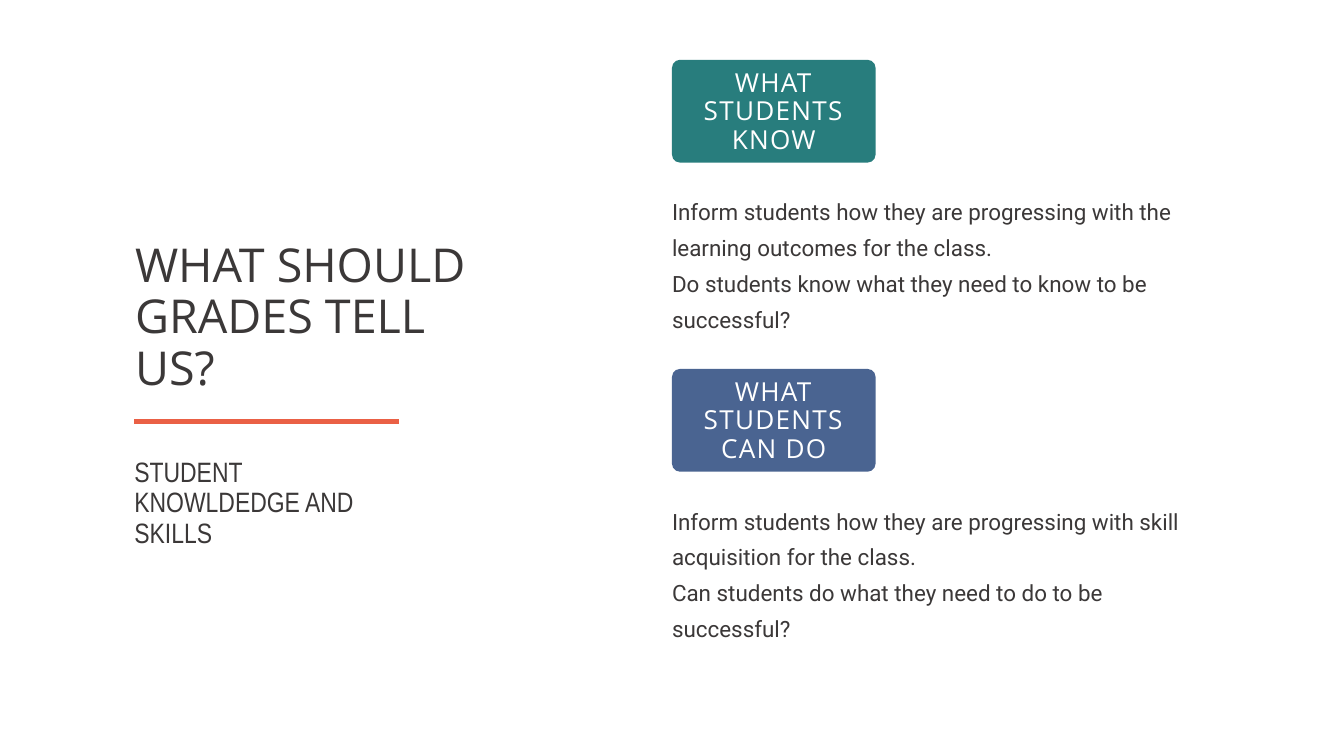
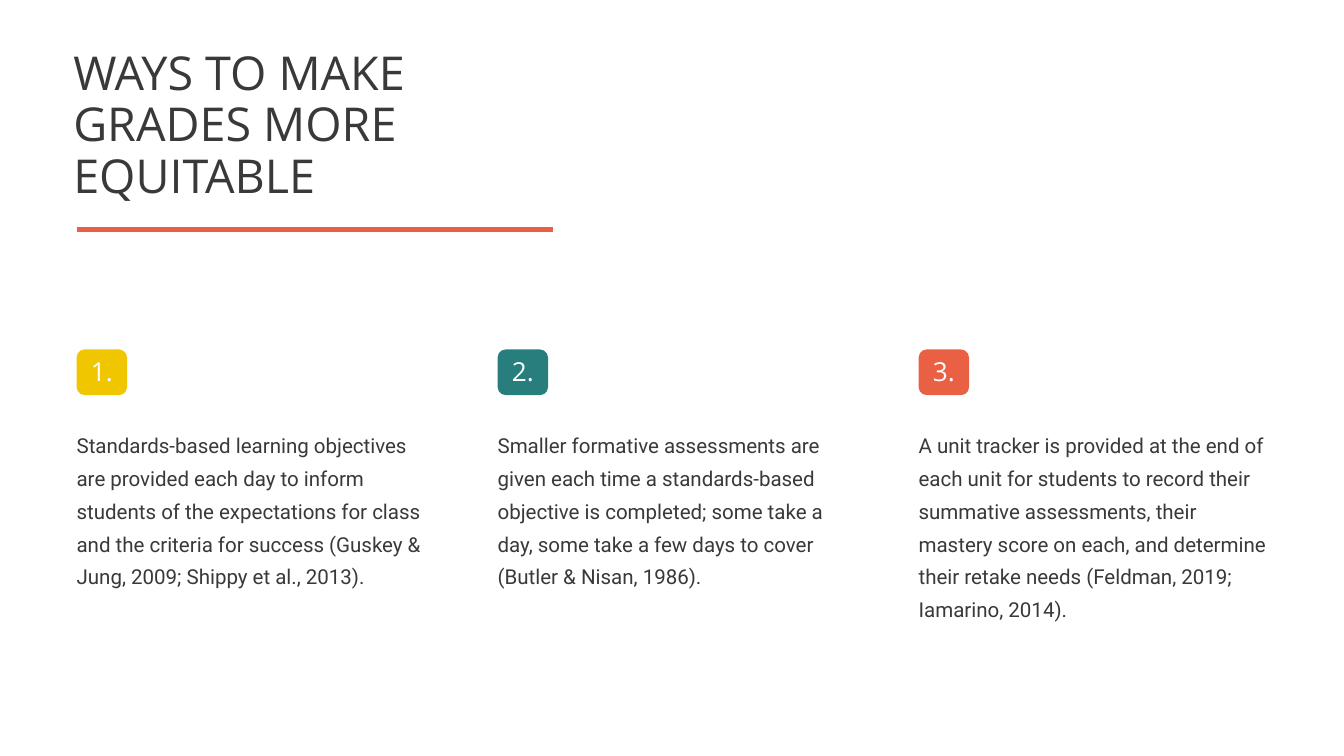
from dataclasses import dataclass

import pptx
import pptx.dml.color
import pptx.enum.shapes
import pptx.enum.text
import pptx.oxml
import pptx.oxml.ns
import pptx.util


@dataclass(frozen=True)
class Theme:
    ink: str = "3B3838"
    white: str = "FFFFFF"
    coral: str = "EA6045"
    teal: str = "287D7D"
    blue: str = "4A6491"
    yellow: str = "F0C600"
    heading_font: str = "Open Sans"
    subtitle_font: str = "Arial Narrow"
    body_font: str = "Roboto"
    title_size: float = 50
    subtitle_size: float = 30
    label_size: float = 28
    large_body_size: float = 24
    body_size: float = 22
    tight: float = 1.1  # line pitch as a multiple of the type size
    loose: float = 1.6
    rule_width: float = 5.25
    corner: float = 0.12


THEME = Theme()
COLUMNS, ROWS = 20, 11.25  # square grid cells, one inch each
CELL = pptx.util.Inches(1)

deck = pptx.Presentation()
deck.slide_width = int(COLUMNS * CELL)
deck.slide_height = int(ROWS * CELL)


def add_text(page, text, left, top, width, height, *, size, font=THEME.heading_font,
             color=THEME.ink, pitch=THEME.tight, centered=False, tracking=0):
    """Add a text box on the grid; each line of text becomes a paragraph."""
    box = page.shapes.add_textbox(*(int(n * CELL) for n in (left, top, width, height)))
    frame = box.text_frame
    frame.word_wrap = True
    frame.auto_size = pptx.enum.text.MSO_AUTO_SIZE.SHAPE_TO_FIT_TEXT
    frame.margin_left = frame.margin_right = frame.margin_top = frame.margin_bottom = 0
    frame.text = text
    for para in frame.paragraphs:
        para.line_spacing = pptx.util.Pt(size * pitch)
        if centered:
            para.alignment = pptx.enum.text.PP_ALIGN.CENTER
        for span in para.runs:
            span.font.name = font
            span.font.size = pptx.util.Pt(size)
            span.font.color.rgb = pptx.dml.color.RGBColor.from_string(color)
            if tracking:
                span.font._element.set("spc", str(int(tracking * 100)))


def add_badge(page, label, fill, left, top, width, height, text_height, tracking=0):
    """Add a rounded colour block with a white centred label over it."""
    badge = page.shapes.add_shape(
        pptx.enum.shapes.MSO_SHAPE.ROUNDED_RECTANGLE,
        *(int(n * CELL) for n in (left, top, width, height)))
    badge.adjustments[0] = THEME.corner / min(width, height)
    badge.shadow.inherit = False
    badge.fill.solid()
    badge.fill.fore_color.rgb = pptx.dml.color.RGBColor.from_string(fill)
    badge.line.fill.background()
    add_text(page, label, left, top + 0.13, width, text_height, size=THEME.label_size,
             color=THEME.white, centered=True, tracking=tracking)


# Titles, each with a coral rule: title box, then rule start, end and height
headings = [
    ("WHAT SHOULD GRADES TELL US?", (2.01, 3.58, 5.64, 2.31), (2, 5.94, 6.27)),
    ("WAYS TO MAKE GRADES MORE EQUITABLE", (1.09, 0.72, 7.58, 2.31), (1.14, 8.23, 3.41)),
]
pages = []
for title, title_box, (start, end, row) in headings:
    page = deck.slides.add_slide(deck.slide_layouts[6])
    rule = page.shapes.add_connector(
        pptx.enum.shapes.MSO_CONNECTOR.STRAIGHT,
        *(int(n * CELL) for n in (start, row, end, row)))
    rule.line.color.rgb = pptx.dml.color.RGBColor.from_string(THEME.coral)
    rule.line.width = pptx.util.Pt(THEME.rule_width)
    rule._element.spPr.append(pptx.oxml.parse_xml(
        f"<a:effectLst {pptx.oxml.ns.nsdecls('a')}/>"))
    add_text(page, title, *title_box, size=THEME.title_size)
    pages.append(page)
purpose_page, ways_page = pages

# What grades should tell us: two stacked topics on the right half
add_text(purpose_page, "STUDENT KNOWLDEDGE AND SKILLS", 2, 6.8, 3.94, 0.93,
         size=THEME.subtitle_size, font=THEME.subtitle_font)
topics = [
    ("WHAT STUDENTS KNOW", THEME.teal,
     "Inform students how they are progressing with the learning outcomes for the class.\n"
     "Do students know what they need to know to be successful?"),
    ("WHAT STUDENTS CAN DO", THEME.blue,
     "Inform students how they are progressing with skill acquisition for the class.\n"
     "Can students do what they need to do to be successful?"),
]
topic_left, topic_top, topic_step = COLUMNS / 2, 0.89, 4.6
for index, (label, fill, body) in enumerate(topics):
    top = topic_top + index * topic_step
    add_badge(purpose_page, label, fill, topic_left, top, 3.03, 1.53, 1.3, tracking=1.4)
    add_text(purpose_page, body, topic_left, top + 1.93, 8.05, 2.09,
             size=THEME.large_body_size, font=THEME.body_font, pitch=THEME.loose)

# Ways to make grades more equitable: three numbered columns
ways = [
    (THEME.yellow,
     "Standards-based learning objectives are provided each day to inform students of the "
     "expectations for class and the criteria for success (Guskey & Jung, 2009; "
     "Shippy et al., 2013)."),
    (THEME.teal,
     "Smaller formative assessments are given each time a standards-based objective is "
     "completed; some take a day, some take a few days to cover (Butler & Nisan, 1986)."),
    (THEME.coral,
     "A unit tracker is provided at the end of each unit for students to record their "
     "summative assessments, their mastery score on each, and determine their retake needs "
     "(Feldman, 2019; Iamarino, 2014)."),
]
first_left, last_left = 1.14, 13.67
way_step = (last_left - first_left) / (len(ways) - 1)
for index, (fill, body) in enumerate(ways):
    left = first_left + index * way_step
    add_badge(ways_page, f"{index + 1}.", fill, left, 5.2, 0.75, 0.68, 0.44)
    add_text(ways_page, body, left, 6.32, 5.21, 2.85,
             size=THEME.body_size, font=THEME.body_font, pitch=THEME.loose)

deck.save("out.pptx")
